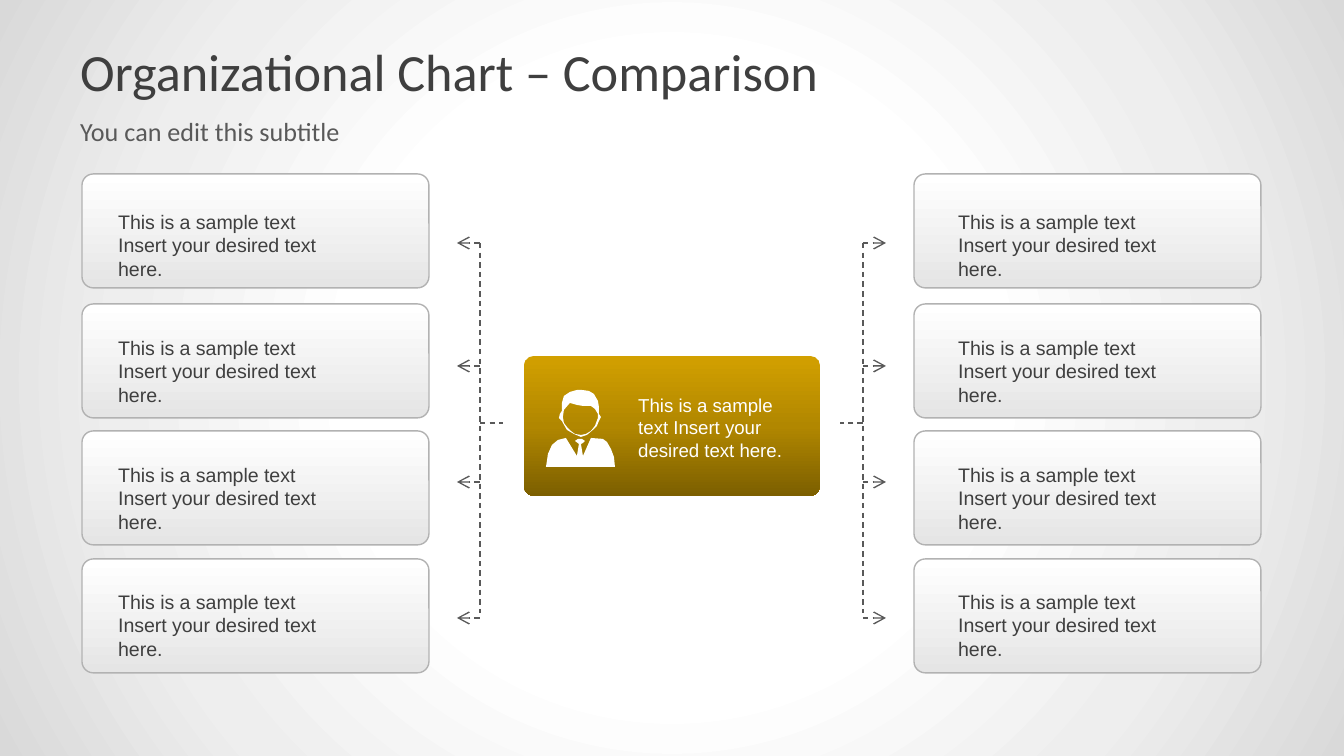
from dataclasses import dataclass

from pptx import Presentation
from pptx.dml.color import RGBColor
from pptx.enum.dml import MSO_LINE
from pptx.enum.shapes import MSO_CONNECTOR, MSO_SHAPE
from pptx.enum.text import MSO_ANCHOR
from pptx.oxml import parse_xml
from pptx.oxml.ns import nsdecls, qn
from pptx.util import Emu, Pt

PX = 9144000 / 1344


@dataclass(frozen=True)
class Theme:
    """Colours, fonts and sizes of the deck."""
    ink: str = "3F3F3F"
    muted: str = "595959"
    white: str = "FFFFFF"
    card_line: str = "B2B2B2"
    backdrop: tuple = ((41, "FFFFFF"), (72, "EEEEEE"), (100, "D9D9D9"))
    card: tuple = ((0, "FFFFFF"), (100, "E5E5E5"))
    gold: tuple = ((0, "D2A000"), (50, "B18700"), (100, "7C5F00"))
    heading_font: str = "Calibri"
    body_font: str = "Arial"
    title_size: float = 28
    subtitle_size: float = 14
    card_size: float = 10.5
    center_size: float = 10
    line_width: float = 0.75


@dataclass(frozen=True)
class Box:
    """A rectangle in px."""
    left: int
    top: int
    width: int
    height: int

    def inner(self, left, top, width, height):
        """Return a box placed relative to this one."""
        return Box(self.left + left, self.top + top, width, height)

    def emu(self):
        """Return left, top, width and height in EMU."""
        return [px(n) for n in (self.left, self.top, self.width, self.height)]


THEME = Theme()
CARD_LINES = ("This is a sample text", "Insert your desired text here.")
CARD_TOPS = (174, 304, 431, 559)
CARD_TEXT_TOPS = (203, 329, 456, 583)
ARROW_OFFSETS = (0, 123, 239, 375)
HAIR = ((36, 0), (43, 1), (48, 4), (52, 11), (53, 17), (53, 24), (55, 27), (53, 31),
        (51, 36), (47, 40), (41, 45), (35, 47), (28, 44), (21, 40), (17, 33), (16, 31),
        (13, 28), (14, 24), (16, 21), (16, 13), (18, 6), (24, 2), (31, 0))
FACE = ((24, 13), (18, 20), (17, 27), (18, 33), (21, 37), (25, 41), (29, 44), (35, 45),
        (40, 44), (45, 41), (49, 36), (52, 28), (52, 24), (49, 19), (45, 16), (37, 16),
        (31, 15))
SUIT = ((20, 48), (31, 66), (33, 54), (29, 51), (32, 49), (36, 49), (39, 51), (37, 53),
        (35, 54), (37, 66), (45, 48), (57, 49), (61, 52), (65, 59), (68, 67), (69, 77),
        (0, 77), (1, 71), (2, 64), (6, 55), (12, 50))


def px(length):
    """Turn px into EMU."""
    return Emu(round(length * PX))


def color(code):
    """Turn a hex code into a colour."""
    return RGBColor.from_string(code)


def set_gradient(fill, element, stops, direction):
    """Fill with gradient stops and a direction given as XML."""
    fill.gradient()
    gradient = next(element.iter(qn("a:gradFill")))
    marks = "".join(f'<a:gs pos="{at * 1000}"><a:srgbClr val="{code}"/></a:gs>'
                    for at, code in stops)
    gradient.getparent().replace(gradient, parse_xml(
        f'<a:gradFill {nsdecls("a")} rotWithShape="1">'
        f"<a:gsLst>{marks}</a:gsLst>{direction}</a:gradFill>"))


def add_text(page, box, *lines, font, size, ink, anchor=MSO_ANCHOR.TOP):
    """Add a wrapped text box with one paragraph for each line."""
    frame = page.shapes.add_textbox(*box.emu()).text_frame
    frame.word_wrap = True
    frame.vertical_anchor = anchor
    for index, line in enumerate(lines):
        para = frame.paragraphs[0] if index == 0 else frame.add_paragraph()
        span = para.add_run()
        span.text = line
        span.font.name = font
        span.font.size = Pt(size)
        span.font.color.rgb = color(ink)


def add_panel(page, box, stops, rounding, outline=None):
    """Add a rounded panel with a downward gradient."""
    panel = page.shapes.add_shape(MSO_SHAPE.ROUNDED_RECTANGLE, *box.emu())
    panel.adjustments[0] = rounding
    panel.shadow.inherit = False
    set_gradient(panel.fill, panel._element.spPr, stops, '<a:lin ang="5400000" scaled="0"/>')
    if outline:
        panel.line.color.rgb = color(outline)
        panel.line.width = Pt(THEME.line_width)
    else:
        panel.line.fill.background()


def add_outline(page, box, *contours):
    """Add a white freeform made of closed contours."""
    builder = page.shapes.build_freeform(*contours[0][0], scale=PX)
    builder.add_line_segments(contours[0][1:])
    for contour in contours[1:]:
        builder.move_to(*contour[0])
        builder.add_line_segments(contour[1:])
    outline = builder.convert_to_shape(px(box.left), px(box.top))
    outline.shadow.inherit = False
    outline.fill.solid()
    outline.fill.fore_color.rgb = color(THEME.white)
    outline.line.fill.background()


def add_dash(page, start, end, arrow=False):
    """Add a dashed line, with an arrowhead at its end on request."""
    dash = page.shapes.add_connector(
        MSO_CONNECTOR.STRAIGHT, *[px(n) for n in (*start, *end)])
    dash.line.color.rgb = color(THEME.muted)
    dash.line.width = Pt(THEME.line_width)
    dash.line.dash_style = MSO_LINE.DASH
    if arrow:
        dash.line._get_or_add_ln().append(
            parse_xml(f'<a:tailEnd {nsdecls("a")} type="arrow"/>'))
    dash._element.spPr.append(parse_xml(f'<a:effectLst {nsdecls("a")}/>'))


def add_heading(page, box):
    """Add the title and the subtitle."""
    add_text(page, box.inner(0, 0, box.width, 79), "Organizational Chart – Comparison",
             font=THEME.heading_font, size=THEME.title_size, ink=THEME.ink,
             anchor=MSO_ANCHOR.MIDDLE)
    add_text(page, box.inner(0, 78, box.width, 56), "You can edit this subtitle",
             font=THEME.heading_font, size=THEME.subtitle_size, ink=THEME.muted)


def add_center(page, box):
    """Add the gold panel with its person and text."""
    add_panel(page, box, THEME.gold, 0.07)
    person = box.inner(22, 34, 69, 77)
    add_outline(page, person, HAIR, FACE)
    add_outline(page, person, SUIT)
    add_text(page, box.inner(101, 31, 179, 82),
             "This is a sample text Insert your desired text here.",
             font=THEME.body_font, size=THEME.center_size, ink=THEME.white)


def add_cards(page, box, text_indent):
    """Add a column of cards."""
    for card_top, text_top in zip(CARD_TOPS, CARD_TEXT_TOPS):
        card = box.inner(0, card_top - box.top, box.width, 114)
        add_panel(page, card, THEME.card, 0.1, outline=THEME.card_line)
        add_text(page, card.inner(text_indent, text_top - card_top, 258, 63), *CARD_LINES,
                 font=THEME.body_font, size=THEME.card_size, ink=THEME.ink)


def add_bracket(page, box, toward_right):
    """Add a spine with arrows to the cards and a stub to the center."""
    spine = box.left + box.width // 2
    tip, stub = box.left, box.left + box.width
    if toward_right:
        tip, stub = stub, tip
    add_dash(page, (spine, box.top), (spine, box.top + 370))
    for offset in ARROW_OFFSETS:
        add_dash(page, (spine, box.top + offset), (tip, box.top + offset), arrow=True)
    add_dash(page, (spine, box.top + 180), (stub, box.top + 180))


def add_comparison(deck):
    """Add the comparison page."""
    page = deck.slides.add_slide(deck.slide_layouts[6])
    set_gradient(page.background.fill, page._element, THEME.backdrop,
                 '<a:path path="circle"><a:fillToRect l="50000" t="50000" '
                 'r="50000" b="50000"/></a:path>')
    add_heading(page, Box(67, 31, 1210, 134))
    add_center(page, Box(524, 356, 296, 140))
    add_cards(page, Box(82, 174, 347, 500), text_indent=23)
    add_cards(page, Box(914, 174, 347, 500), text_indent=31)
    add_bracket(page, Box(457, 243, 46, 375), toward_right=False)
    add_bracket(page, Box(840, 243, 46, 375), toward_right=True)


def main():
    """Build and save the deck."""
    deck = Presentation()
    deck.slide_width, deck.slide_height = px(1344), px(756)
    add_comparison(deck)
    deck.save("out.pptx")


if __name__ == "__main__":
    main()
